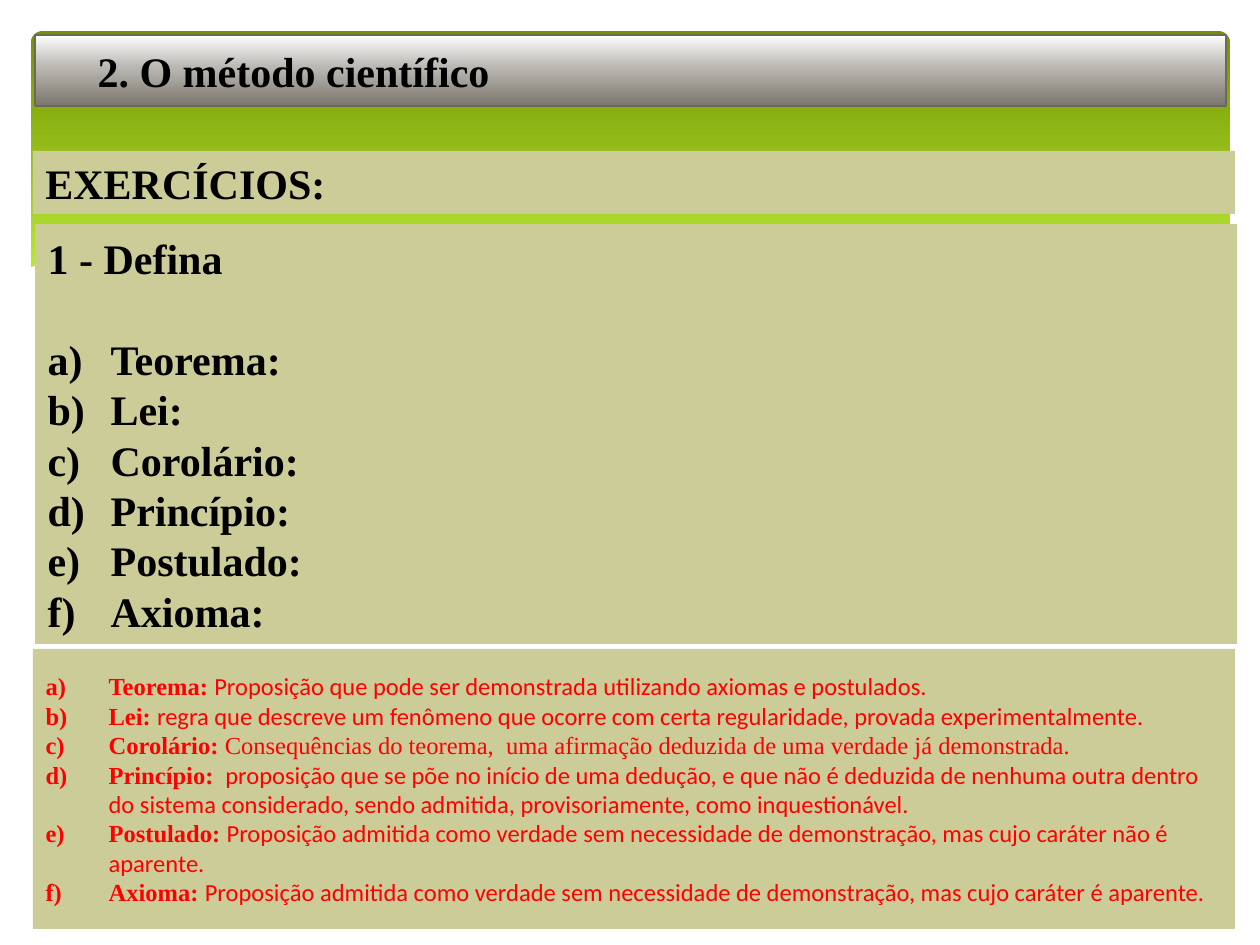
from lxml import etree
from pptx import Presentation
from pptx import util as u
from pptx.dml.color import RGBColor
from pptx.enum import shapes, text
from pptx.oxml.ns import qn

PX = 914400 / 126
SERIF, SANS = "Times New Roman", "Calibri"
BLACK, RED, WHITE, SAND = "000000", "FF0000", "FFFFFF", "CCCC99"


def px(n):
    return u.Emu(round(n * PX))


def rgb(value):
    return RGBColor.from_string(value)


class Deck:
    def __init__(self, slide):
        self.slide = slide
        self.tree = slide.shapes._spTree

    def gradient(self, sp, stops):
        sp.fill.gradient()
        sp.fill.gradient_angle = 270
        gs_list = sp._element.spPr.find(qn("a:gradFill")).find(qn("a:gsLst"))
        for gs in list(gs_list):
            gs_list.remove(gs)
        for pos, color in stops:
            gs = etree.SubElement(gs_list, qn("a:gs"), pos=str(pos * 1000))
            etree.SubElement(gs, qn("a:srgbClr"), val=color)

    def paint(self, sp, color):
        sp.fill.solid()
        sp.fill.fore_color.rgb = rgb(color)
        sp.line.fill.background()

    def shape(self, kind, box):
        sp = self.slide.shapes.add_shape(kind, *map(px, box))
        sp.shadow.inherit = False
        sp.line.fill.background()
        return sp

    def placeholder(self, idx, box):
        sp = self.slide.placeholders[idx]
        sp.left, sp.top, sp.width, sp.height = map(px, box)
        self.tree.append(sp._element)
        return sp

    def wave(self, points, color):
        pts = [(px(x), px(y)) for x, y in points]
        builder = self.slide.shapes.build_freeform(*pts[0], scale=1.0)
        builder.add_line_segments(pts[1:], close=True)
        sp = builder.convert_to_shape()
        sp.shadow.inherit = False
        self.paint(sp, color)

    def frame(self, sp):
        tf = sp.text_frame
        tf.word_wrap = True
        tf.auto_size = text.MSO_AUTO_SIZE.NONE
        tf.vertical_anchor = text.MSO_ANCHOR.MIDDLE
        return tf

    def paragraph(self, p, runs, size, color, margin=0, indent=0, lettered=False):
        p.alignment = text.PP_ALIGN.LEFT
        p.space_before = p.space_after = u.Pt(0)
        p.line_spacing = u.Pt(size * 1.2)
        pPr = p._p.get_or_add_pPr()
        pPr.set("marL", str(px(margin)))
        pPr.set("indent", str(px(indent)))
        if lettered:
            etree.SubElement(pPr, qn("a:buFont"), typeface=SERIF)
            etree.SubElement(pPr, qn("a:buAutoNum"), type="alphaLcParenR")
        else:
            etree.SubElement(pPr, qn("a:buNone"))
        for words, font, bold in runs:
            r = p.add_run()
            r.text = words
            r.font.name, r.font.size, r.font.bold = font, u.Pt(size), bold
            r.font.color.rgb = rgb(color)

    def title(self, words, box, stops):
        sp = self.placeholder(0, box)
        geom = etree.SubElement(sp._element.spPr, qn("a:prstGeom"), prst="roundRect")
        etree.SubElement(geom, qn("a:avLst"))
        self.gradient(sp, stops)
        sp.line.color.rgb = rgb("71685A")
        sp.line.width = u.Pt(0.75)
        p = self.frame(sp).paragraphs[0]
        self.paragraph(p, [(words, SERIF, True)], 24, BLACK, indent=50)

    def band(self, words, box):
        sp = self.shape(shapes.MSO_SHAPE.RECTANGLE, box)
        self.paint(sp, SAND)
        p = self.frame(sp).paragraphs[0]
        self.paragraph(p, [(words, SERIF, True)], 24, BLACK)

    def lettered_list(self, idx, box, items, size, color, heading=None):
        sp = self.placeholder(idx, box)
        self.paint(sp, SAND)
        tf = self.frame(sp)
        p = tf.paragraphs[0]
        if heading:
            self.paragraph(p, [(heading, SERIF, True)], size, color)
            p.space_after = u.Pt(size * 1.2)
            p = tf.add_paragraph()
        for i, runs in enumerate(items):
            if i:
                p = tf.add_paragraph()
            self.paragraph(p, runs, size, color, 63, -63, lettered=True)


WAVE = [
    (1231, 310), (1197, 323), (1159, 334), (1118, 342), (1071, 347), (1019, 349),
    (959, 347), (892, 340), (816, 330), (730, 315), (634, 294), (563, 277),
    (492, 261), (428, 248), (368, 239), (315, 234), (266, 232), (223, 232),
    (184, 233), (150, 236), (120, 241), (96, 246), (74, 251), (58, 256),
    (37, 265), (29, 268), (29, 415), (1231, 415),
]

DEFINITIONS = [
    ("Teorema", SANS, "Proposição que pode ser demonstrada utilizando axiomas e postulados."),
    ("Lei", SANS, "regra que descreve um fenômeno que ocorre com certa regularidade, "
     "provada experimentalmente."),
    ("Corolário", SERIF, "Consequências do teorema,  uma afirmação deduzida de uma verdade "
     "já demonstrada."),
    ("Princípio", SANS, " proposição que se põe no início de uma dedução, e que não é deduzida "
     "de nenhuma outra dentro do sistema considerado, sendo admitida, provisoriamente, "
     "como inquestionável."),
    ("Postulado", SANS, "Proposição admitida como verdade sem necessidade de demonstração, "
     "mas cujo caráter não é aparente."),
    ("Axioma", SANS, "Proposição admitida como verdade sem necessidade de demonstração, "
     "mas cujo caráter é aparente."),
]


def main():
    prs = Presentation()
    prs.slide_width, prs.slide_height = u.Inches(10), u.Inches(7.5)
    deck = Deck(prs.slides.add_slide(prs.slide_layouts[3]))

    panel = deck.shape(shapes.MSO_SHAPE.ROUNDED_RECTANGLE, (31, 31, 1199, 340))
    panel.adjustments[0] = 0.034
    deck.gradient(panel, [(0, "6F9400"), (90, "D0FF44")])
    deck.wave(WAVE, WHITE)

    deck.title("2. O método científico", (35, 35, 1191, 71),
               [(0, WHITE), (44, "BCB9B4"), (100, "7B766D")])
    deck.band("EXERCÍCIOS:", (33, 151, 1202, 63))

    questions = [[(f"{term}:", SERIF, True)] for term, _, _ in DEFINITIONS]
    deck.lettered_list(1, (35, 224, 1202, 420), questions, 24, BLACK, "1 - Defina")

    answers = [[(f"{term}: ", SERIF, True), (meaning, font, False)]
               for term, font, meaning in DEFINITIONS]
    deck.lettered_list(2, (33, 649, 1202, 280), answers, 14, RED)

    prs.save("out.pptx")


if __name__ == "__main__":
    main()
